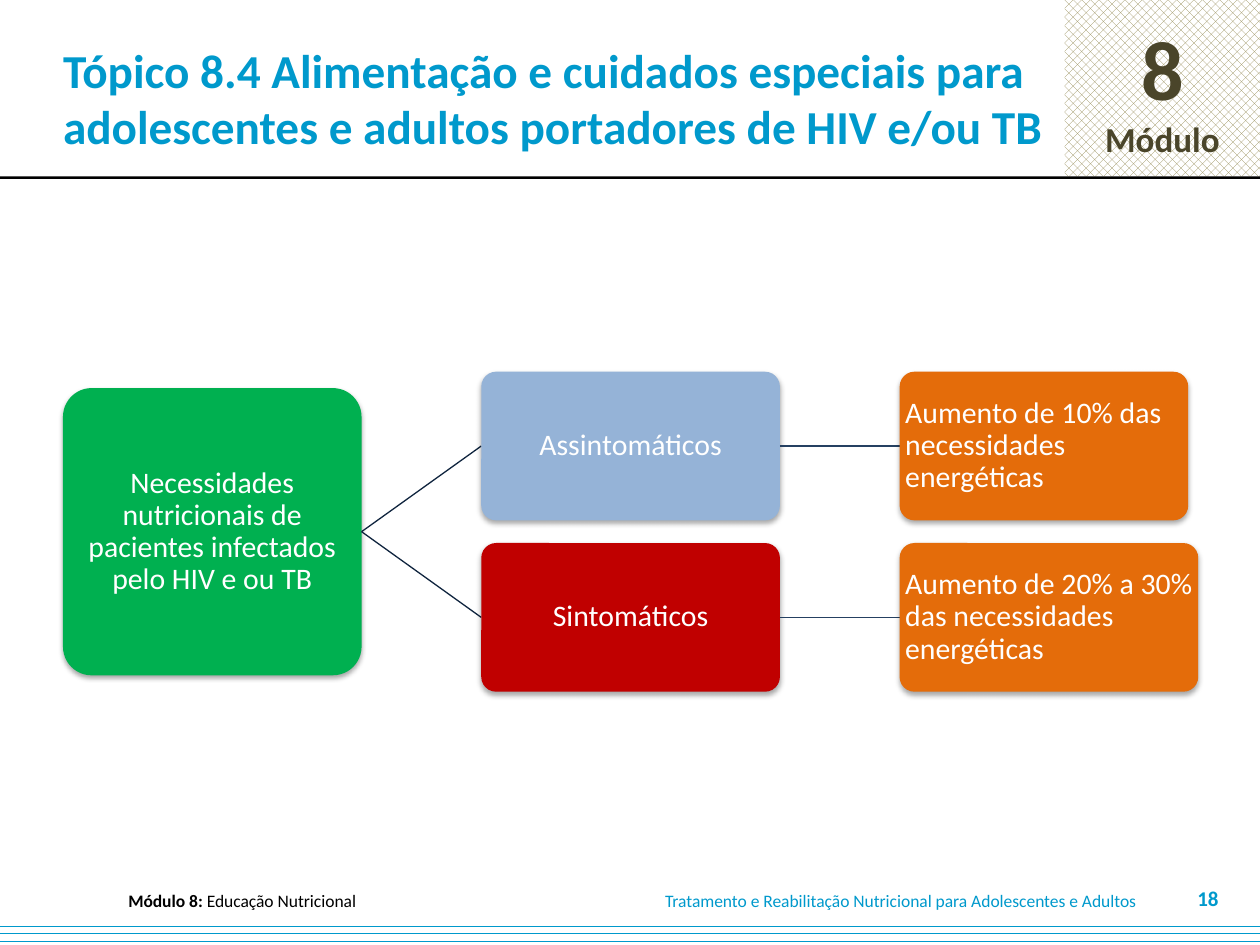
from dataclasses import dataclass

from lxml import etree
from pptx import Presentation
from pptx.dml.color import RGBColor
from pptx.enum.dml import MSO_PATTERN
from pptx.enum.shapes import MSO_CONNECTOR, MSO_SHAPE
from pptx.enum.text import MSO_ANCHOR, PP_ALIGN
from pptx.oxml import parse_xml
from pptx.oxml.ns import nsdecls, qn
from pptx.util import Inches, Pt

RECT, ROUNDED = MSO_SHAPE.RECTANGLE, MSO_SHAPE.ROUNDED_RECTANGLE
STRAIGHT = MSO_CONNECTOR.STRAIGHT
DOTS, DASHES = MSO_PATTERN.PERCENT_50, MSO_PATTERN.DASHED_HORIZONTAL
LEFT, CENTER, RIGHT = PP_ALIGN.LEFT, PP_ALIGN.CENTER, PP_ALIGN.RIGHT
MIDDLE = MSO_ANCHOR.MIDDLE


@dataclass(frozen=True)
class Theme:
    font: str = "Calibri"
    accent: str = "0099CC"
    badge_text: str = "4A452A"
    badge_pattern: str = "948A54"
    black: str = "000000"
    white: str = "FFFFFF"
    root: str = "00B050"
    asymptomatic: str = "95B3D7"
    symptomatic: str = "C00000"
    advice: str = "E46C0A"
    branch: str = "0F243E"
    link: str = "254061"
    title_size: float = 27
    badge_size: float = 48
    badge_label_size: float = 20
    box_size: float = 17
    footer_size: float = 10
    number_size: float = 12
    line_width: float = 0.75


class SlideBuilder:
    def __init__(self, slide, theme):
        self.shapes = slide.shapes
        self.theme = theme

    def format_run(self, run, size, color, bold=False):
        run.font.name = self.theme.font
        run.font.size = Pt(size)
        run.font.bold = bold
        run.font.color.rgb = RGBColor.from_string(color)

    def block(self, x, y, width, height, kind=RECT, color=None, pattern=None):
        block = self.shapes.add_shape(
            kind, Inches(x), Inches(y), Inches(width), Inches(height))
        block.shadow.inherit = False
        block.line.fill.background()
        if pattern is None:
            block.fill.solid()
        else:
            block.fill.patterned()
            block.fill.pattern = pattern
            block.fill.back_color.rgb = RGBColor.from_string(self.theme.white)
        block.fill.fore_color.rgb = RGBColor.from_string(color)
        return block

    def badge(self, x, y, width, height, number, label):
        theme = self.theme
        badge = self.block(x, y, width, height, color=theme.badge_pattern, pattern=DOTS)
        frame = badge.text_frame
        frame.vertical_anchor = MIDDLE
        frame.text = f"{number}\n{label}"
        sizes = (theme.badge_size, theme.badge_label_size)
        for paragraph, size in zip(frame.paragraphs, sizes):
            paragraph.alignment = CENTER
            self.format_run(paragraph.runs[0], size, theme.badge_text, bold=True)

    def text(self, x, y, width, height, parts, size, color, align=LEFT, left_inset=0.1):
        """Add one paragraph; parts are (wording, bold) pairs."""
        box = self.shapes.add_textbox(
            Inches(x), Inches(y), Inches(width), Inches(height))
        frame = box.text_frame
        frame.word_wrap = True
        frame.vertical_anchor = MIDDLE
        frame.margin_left = Inches(left_inset)
        paragraph = frame.paragraphs[0]
        paragraph.alignment = align
        for wording, bold in parts:
            run = paragraph.add_run()
            run.text = wording
            self.format_run(run, size, color, bold)

    def box(self, x, middle, width, height, wording, color, align=CENTER):
        box = self.block(x, middle - height / 2, width, height, ROUNDED, color)
        box.adjustments[0] = 0.1
        effects = box._element.spPr.find(qn("a:effectLst"))
        effects.append(parse_xml(
            f'<a:outerShdw {nsdecls("a")} blurRad="{Pt(3.1)}" dist="{Pt(1.8)}" '
            f'dir="5400000" rotWithShape="0"><a:srgbClr val="{self.theme.black}">'
            '<a:alpha val="35000"/></a:srgbClr></a:outerShdw>'))
        frame = box.text_frame
        frame.word_wrap = True
        frame.vertical_anchor = MIDDLE
        frame.margin_left = frame.margin_right = Inches(0.01)
        frame.margin_top = frame.margin_bottom = Inches(0.01)
        frame.text = wording
        paragraph = frame.paragraphs[0]
        paragraph.alignment = align
        paragraph.line_spacing = 0.9
        self.format_run(paragraph.runs[0], self.theme.box_size, self.theme.white)

    def connector(self, x1, y1, x2, y2, color):
        line = self.shapes.add_connector(
            STRAIGHT, Inches(x1), Inches(y1), Inches(x2), Inches(y2))
        line.line.color.rgb = RGBColor.from_string(color)
        line.line.width = Pt(self.theme.line_width)
        etree.SubElement(line._element.spPr, qn("a:effectLst"))


def main():
    theme = Theme()
    presentation = Presentation()
    presentation.slide_width, presentation.slide_height = Inches(10), Inches(7.5)
    slide = presentation.slides.add_slide(presentation.slide_layouts[6])
    builder = SlideBuilder(slide, theme)

    # Header and footer bands
    builder.badge(8.45, 0, 1.55, 1.4, "8", "Módulo")
    builder.block(0, 1.4, 10, 0.02, color=theme.black)
    builder.block(0, 7.29, 10, 0.21, color=theme.accent, pattern=DASHES)

    # Title
    builder.text(
        0, 0, 8.58, 1.55,
        [("Tópico 8.4 Alimentação e cuidados especiais para "
          "adolescentes e adultos portadores de HIV e/ou TB", True)],
        theme.title_size, theme.accent, left_inset=0.5)

    # Decision tree: one root, then a condition and its advice on each row
    column_width, column_gap, row_height = 2.37, 0.95, 1.18
    root_x, root_middle = 0.5, 4.22
    condition_x = root_x + column_width + column_gap
    advice_x = condition_x + column_width + column_gap
    builder.box(
        root_x, root_middle, column_width, 2.28,
        "Necessidades nutricionais de pacientes infectados pelo HIV e ou TB",
        theme.root)
    rows = [
        (3.54, "Assintomáticos", theme.asymptomatic, 2.29,
         "Aumento de 10% das necessidades energéticas"),
        (4.9, "Sintomáticos", theme.symptomatic, column_width,
         "Aumento de 20% a 30% das necessidades energéticas"),
    ]
    for middle, condition, color, advice_width, advice in rows:
        builder.connector(
            root_x + column_width, root_middle, condition_x, middle, theme.branch)
        builder.box(condition_x, middle, column_width, row_height, condition, color)
        builder.connector(
            condition_x + column_width, middle, advice_x, middle, theme.link)
        builder.box(
            advice_x, middle, advice_width, row_height, advice, theme.advice, LEFT)

    # Footer text and slide number
    builder.text(
        0.92, 7.05, 4.23, 0.2,
        [("Módulo 8: ", True), ("Educação Nutricional", False)],
        theme.footer_size, theme.black)
    builder.text(
        5.18, 7.05, 4.05, 0.2,
        [("Tratamento e Reabilitação Nutricional para Adolescentes e Adultos", False)],
        theme.footer_size, theme.accent)
    builder.text(
        9.27, 7, 0.5, 0.25, [("18", True)], theme.number_size, theme.accent, RIGHT)

    presentation.save("out.pptx")


if __name__ == "__main__":
    main()
